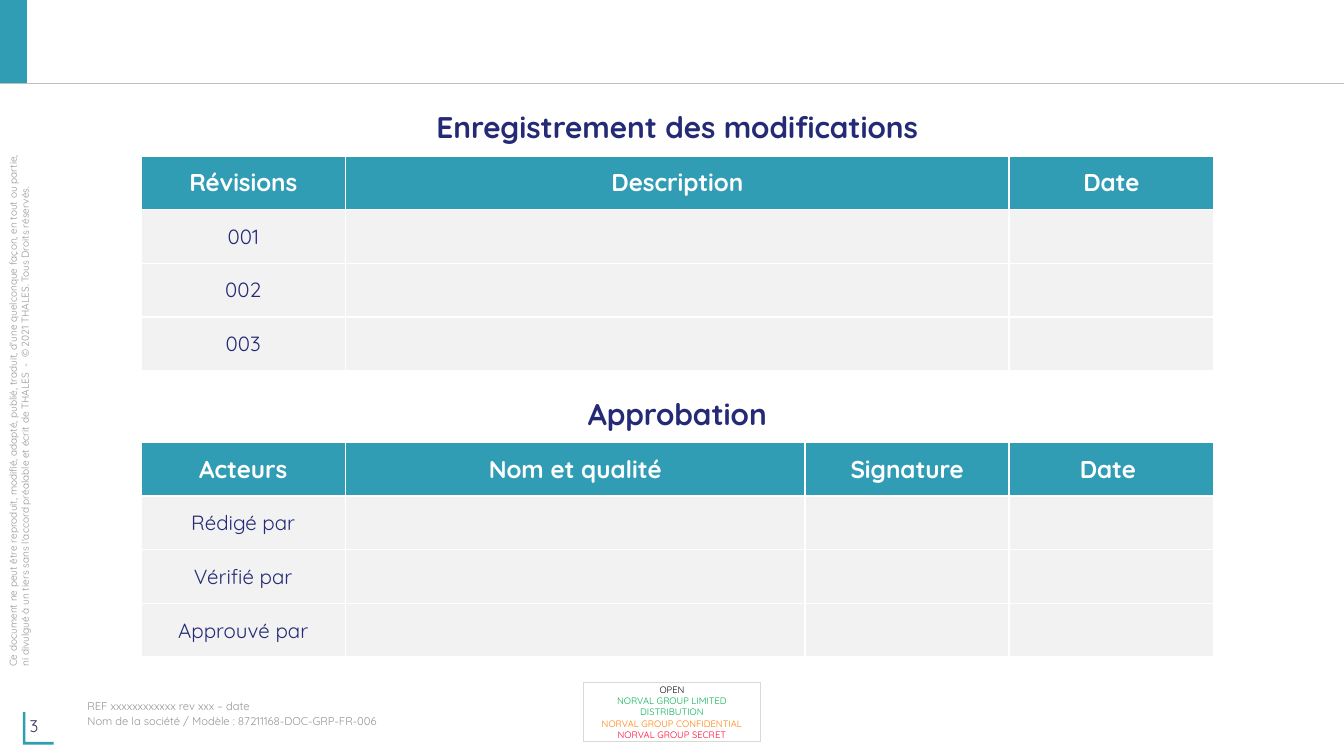
from lxml import etree
from pptx import Presentation
from pptx.dml.color import RGBColor
from pptx.enum import shapes, text
from pptx.oxml import ns
from pptx.util import Inches, Pt

TEAL = RGBColor(0x30, 0x9D, 0xB5)
NAVY = RGBColor(0x24, 0x2A, 0x75)
SLATE = RGBColor(0x33, 0x33, 0x66)
GREY = RGBColor(0x96, 0x96, 0x96)
RULE = RGBColor(0xBF, 0xBF, 0xBF)
EDGE = RGBColor(0xD9, 0xD9, 0xD9)
PALE = RGBColor(0xF2, 0xF2, 0xF2)
WHITE = RGBColor(0xFF, 0xFF, 0xFF)
BLACK = RGBColor(0, 0, 0)
GREEN = RGBColor(0, 0xB0, 0x50)
ORANGE = RGBColor(0xFF, 0x7F, 0)
RED = RGBColor(0xFF, 0, 0x33)

FONT = "Quicksand"
LEFT, WIDTH = 1.05, 7.98
SIDE, ROW = 1.52, 0.4
CENTER = text.PP_ALIGN.CENTER
MIDDLE = text.MSO_ANCHOR.MIDDLE


def style(para, size, color, bold=False, align=None):
    para.alignment = align
    font = para.font
    font.name, font.size, font.bold = FONT, Pt(size), bold
    font.color.rgb = color


def fill_text(shape, lines, size, colors, bold=False, align=None, pad=(0, 0), gap=0):
    """Write one paragraph per line; pad is the side and the top inset."""
    frame = shape.text_frame
    frame.word_wrap = True
    frame.vertical_anchor = MIDDLE
    frame.margin_left = frame.margin_right = Inches(pad[0])
    frame.margin_top = frame.margin_bottom = Inches(pad[1])
    for i, (line, color) in enumerate(zip(lines, colors)):
        para = frame.add_paragraph() if i else frame.paragraphs[0]
        para.text = line
        style(para, size, color, bold, align)
        if i and gap:
            para.space_before = Pt(gap)


def add_text(slide, box, lines, size, color, **opts):
    shape = slide.shapes.add_textbox(*map(Inches, box))
    fill_text(shape, lines, size, [color] * len(lines), **opts)
    return shape


def add_rect(slide, box, color):
    rect = slide.shapes.add_shape(shapes.MSO_SHAPE.RECTANGLE, *map(Inches, box))
    rect.shadow.inherit = False
    rect.fill.solid()
    rect.fill.fore_color.rgb = color
    rect.line.fill.background()
    return rect


def add_header(slide, x, y, width, height):
    add_rect(slide, (x, y, 0.2, height), TEAL)
    base = Inches(y + height)
    rule = slide.shapes.add_connector(
        shapes.MSO_CONNECTOR.STRAIGHT, Inches(x), base, Inches(x + width), base)
    rule.line.color.rgb = RULE
    rule.line.width = Pt(0.75)
    etree.SubElement(rule._element.spPr, ns.qn("a:effectLst"))


def add_notice(slide, x, y, width, height):
    line = ("Ce document ne peut être reproduit, modifié, adapté, publié, traduit, "
            "d'une quelconque façon, en tout ou partie, \v"
            "ni divulgué à un tiers sans l'accord préalable et écrit de THALES  -  "
            "© 2021 THALES. Tous Droits réservés.")
    add_text(slide, (x, y, width, height), [line], 5.4, GREY).rotation = 270


def add_number(slide, x, y, number):
    """Page number inside an L-shaped corner mark."""
    add_text(slide, (x, y, 0.86, 0.3), [number], 9, SLATE, pad=(0.07, 0.04))
    left, top, wide, high, bar = x + 0.02, y + 0.05, 0.23, 0.24, 0.02
    points = [(left, top), (left, top + high), (left + wide, top + high),
              (left + wide, top + high - bar), (left + bar, top + high - bar),
              (left + bar, top)]
    path = [(Inches(a), Inches(b)) for a, b in points]
    outline = slide.shapes.build_freeform(*path[0])
    outline.add_line_segments(path[1:])
    mark = outline.convert_to_shape()
    mark.shadow.inherit = False
    mark.fill.solid()
    mark.fill.fore_color.rgb = TEAL
    mark.line.fill.background()


def add_badge(slide, x, y, width, height):
    """Half-transparent box with the levels of secrecy."""
    badge = add_rect(slide, (x, y, width, height), WHITE)
    tint = badge._element.spPr.find(".//" + ns.qn("a:srgbClr"))
    etree.SubElement(tint, ns.qn("a:alpha"), val="50000")
    badge.line.color.rgb = EDGE
    badge.line.width = Pt(0.5)
    levels = ["OPEN", "NORVAL GROUP LIMITED DISTRIBUTION",
              "NORVAL GROUP CONFIDENTIAL", "NORVAL GROUP SECRET"]
    fill_text(badge, levels, 5, [BLACK, GREEN, ORANGE, RED],
              align=CENTER, pad=(0.05, 0.05))


def add_borders(cell):
    props = cell._tc.get_or_add_tcPr()
    for i, side in enumerate(("lnL", "lnR", "lnT", "lnB")):
        line = etree.Element(ns.qn("a:" + side), w=str(Pt(1)))
        solid = etree.SubElement(line, ns.qn("a:solidFill"))
        etree.SubElement(solid, ns.qn("a:srgbClr"), val=str(WHITE))
        props.insert(i, line)


def add_section(slide, x, y, width, title, heads, labels):
    """Title over a table; the second column takes the width left over."""
    add_text(slide, (x, y, width, 0.37), [title], 16, NAVY,
             bold=True, align=CENTER, pad=(0.05, 0.05))
    count = len(labels) + 1
    table = slide.shapes.add_table(
        count, len(heads), Inches(x), Inches(y + 0.4),
        Inches(width), Inches(count * ROW)).table
    for i, col in enumerate(table.columns):
        col.width = Inches(width - SIDE * (len(heads) - 1) if i == 1 else SIDE)
    for r, row in enumerate(table.rows):
        row.height = Inches(ROW)
        for c, cell in enumerate(row.cells):
            cell.fill.solid()
            cell.fill.fore_color.rgb = PALE if r else TEAL
            cell.vertical_anchor = MIDDLE
            cell.margin_left = cell.margin_right = Inches(0.05)
            cell.margin_top = cell.margin_bottom = Inches(0.04)
            add_borders(cell)
            if r == 0:
                cell.text = heads[c]
            elif c == 0:
                cell.text = labels[r - 1]
            para = cell.text_frame.paragraphs[0]
            if r:
                style(para, 11, NAVY, align=CENTER)
            else:
                style(para, 13, WHITE, bold=True, align=CENTER)


def main():
    deck = Presentation()
    deck.slide_width = Inches(10)
    deck.slide_height = deck.slide_width * 9 // 16
    slide = deck.slides.add_slide(deck.slide_layouts[6])
    add_header(slide, 0, 0, 10, 0.62)
    add_notice(slide, -2.03, 2.7, 4.34, 0.18)
    add_number(slide, 0.15, 5.25, "3")
    add_text(slide, (0.65, 5.2, 3.62, 0.22),
             ["REF xxxxxxxxxxxx rev xxx – date",
              "Nom de la société / Modèle : 87211168-DOC-GRP-FR-006"],
             6, GREY, gap=1.2)
    add_badge(slide, 4.34, 5.08, 1.32, 0.44)
    add_section(slide, LEFT, 0.76, WIDTH, "Enregistrement des modifications",
                ["Révisions", "Description", "Date"], ["001", "002", "003"])
    add_section(slide, LEFT, 2.89, WIDTH, "Approbation",
                ["Acteurs", "Nom et qualité", "Signature", "Date "],
                ["Rédigé par", "Vérifié par", "Approuvé par"])
    deck.save("out.pptx")


if __name__ == "__main__":
    main()
